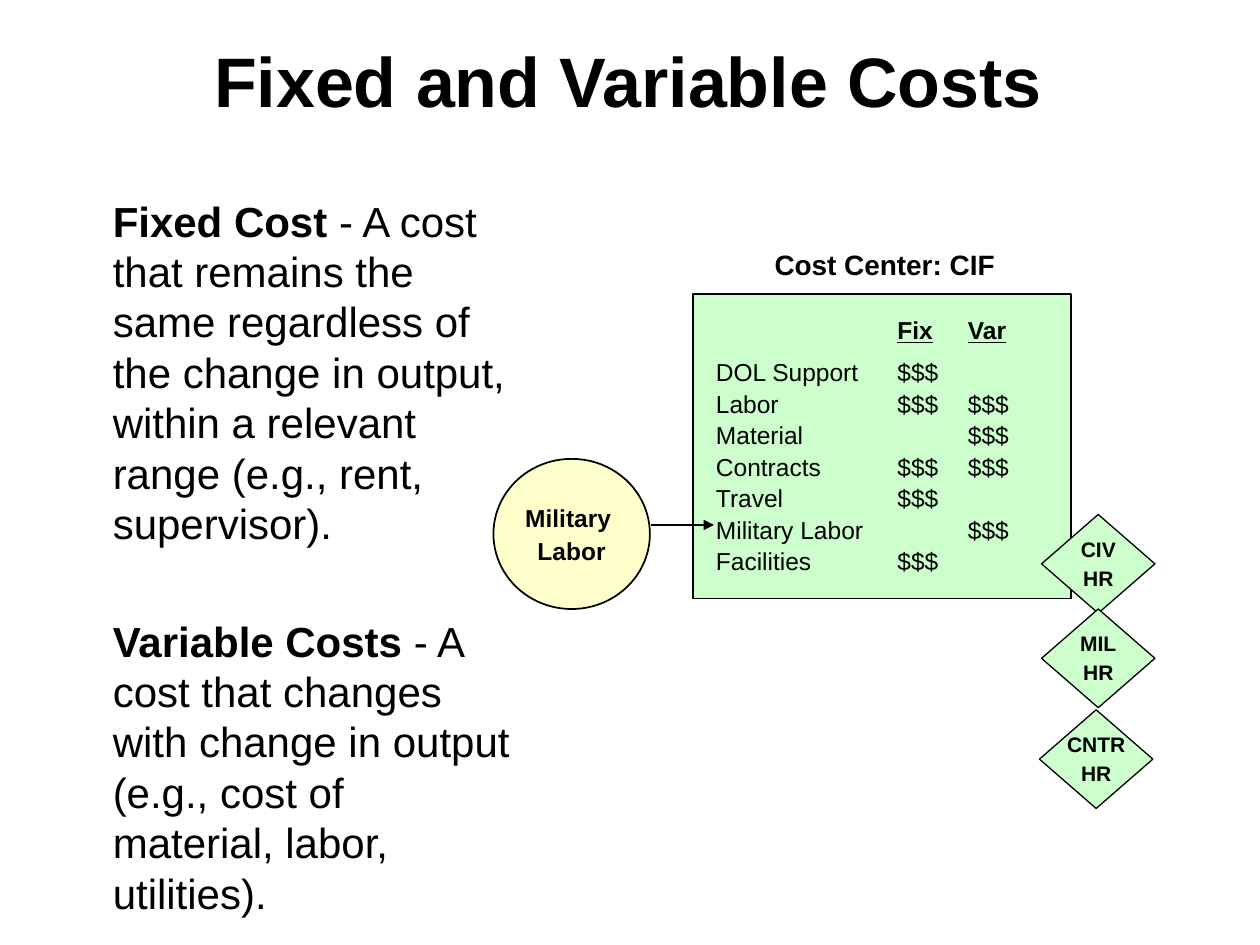
from dataclasses import dataclass
from lxml import etree
from pptx import Presentation
from pptx.dml.color import RGBColor
from pptx.enum.shapes import MSO_CONNECTOR, MSO_SHAPE
from pptx.enum.text import MSO_ANCHOR, PP_ALIGN
from pptx.oxml.ns import qn
from pptx.util import Inches, Pt

RECT, OVAL, GEM = MSO_SHAPE.RECTANGLE, MSO_SHAPE.OVAL, MSO_SHAPE.DIAMOND
LINE = MSO_CONNECTOR.STRAIGHT
LEFT, MID = PP_ALIGN.LEFT, PP_ALIGN.CENTER
TOP, CORE = MSO_ANCHOR.TOP, MSO_ANCHOR.MIDDLE


@dataclass
class Theme:
    font: str = "Arial"
    ink: str = "000000"
    green: str = "CCFFCC"
    cream: str = "FFFFCC"
    title: int = 40
    body: int = 24
    head: int = 16
    row: int = 14
    tag: int = 12
    thin: float = 0.75
    bold: float = 1


theme = Theme()
TITLE = "Fixed and Variable Costs"
TERMS = [
    ("Fixed Cost", " - A cost that remains the same regardless of the change in output, "
     "within a relevant range (e.g., rent, supervisor)."),
    ("Variable Costs", " - A cost that changes with change in output "
     "(e.g., cost of material, labor, utilities)."),
]
CENTER = "Cost Center: CIF"
HEADS = "\tFix\tVar"
COSTS = [
    "DOL Support\t$$$",
    "Labor\t$$$\t$$$",
    "Material\t\t$$$",
    "Contracts\t$$$\t$$$",
    "Travel\t$$$",
    "Military Labor\t\t$$$",
    "Facilities\t$$$",
]
SOURCE = "Military \nLabor"
POOLS = [("CIV\nHR", 99.2, 49, 6.8), ("MIL\nHR", 99.2, 58, 7), ("CNTR\nHR", 99, 67.6, 8.5)]

COLS, ROWS = 120, 90
TABS = (1.44, 2)

deck = Presentation()
deck.slide_width, deck.slide_height = Inches(10), Inches(7.5)
slide = deck.slides.add_slide(deck.slide_layouts[6])
shapes = slide.shapes


def place(x, y, w, h):
    across, down = deck.slide_width / COLS, deck.slide_height / ROWS
    return [int(n) for n in (x * across, y * down, w * across, h * down)]


def style(run, size, bold=False):
    font = run.font
    font.name, font.size, font.bold = theme.font, Pt(size), bold
    font.color.rgb = RGBColor.from_string(theme.ink)


def write(shape, text, size, bold=False, align=MID, after=0, pad=0.05, wrap=True, anchor=TOP):
    frame = shape.text_frame
    frame.text = text
    frame.word_wrap, frame.vertical_anchor = wrap, anchor
    frame.margin_left = frame.margin_right = Inches(0.1)
    frame.margin_top = frame.margin_bottom = Inches(pad)
    for para in frame.paragraphs:
        para.alignment, para.space_after = align, Pt(after)
        for run in para.runs:
            style(run, size, bold)
    return frame


def label(box, text, size, **look):
    return write(shapes.add_textbox(*place(*box)), text, size, **look)


def draw(kind, box, fill, width):
    shape = shapes.add_shape(kind, *place(*box))
    shape.shadow.inherit = False
    shape.fill.solid()
    shape.fill.fore_color.rgb = RGBColor.from_string(fill)
    shape.line.color.rgb = RGBColor.from_string(theme.ink)
    shape.line.width = Pt(width)
    return shape


def define(box):
    frame = shapes.add_textbox(*place(*box)).text_frame
    frame.word_wrap = True
    for i, (term, rest) in enumerate(TERMS):
        para = frame.add_paragraph() if i else frame.paragraphs[0]
        para.line_spacing = Pt(theme.body * 1.2)
        if i:
            para.space_before = Pt(theme.body * 1.6)
        props = para._p.get_or_add_pPr()
        props.set("marL", str(Inches(0.38)))
        props.set("indent", "0")
        for text, bold in ((term, True), (rest, False)):
            run = para.add_run()
            run.text = text
            style(run, theme.body, bold)


def entry(top, text, bold=False):
    frame = label((67, top, 33, 2.8), text, theme.row, bold=bold, align=LEFT, pad=0)
    para = frame.paragraphs[0]
    stops = etree.SubElement(para._p.get_or_add_pPr(), qn("a:tabLst"))
    for stop in TABS:
        etree.SubElement(stops, qn("a:tab"), pos=str(Inches(stop)), algn="l")
    for run in para.runs:
        run.font.underline = bold


def arrow(x, y, end):
    start = place(x, y, end, y)
    line = shapes.add_connector(LINE, *start)
    line.line.color.rgb = RGBColor.from_string(theme.ink)
    line.line.width = Pt(theme.bold)
    etree.SubElement(line.line._get_or_add_ln(), qn("a:tailEnd"), type="triangle")
    etree.SubElement(line._element.spPr, qn("a:effectLst"))


define((5, 18, 45, 67))
label((15.8, 3, 88, 11), TITLE, theme.title, bold=True)
draw(RECT, (66, 28, 36, 29), theme.green, theme.thin)
label((67.5, 23, 33.5, 4.4), CENTER, theme.head, bold=True, after=2)
oval = draw(OVAL, (47, 43.7, 14.9, 14.3), theme.cream, theme.bold)
write(oval, SOURCE, theme.row, bold=True, after=2, wrap=False, anchor=CORE)
arrow(62, 50, 68)

entry(30, HEADS, bold=True)
for i, cost in enumerate(COSTS):
    entry(34 + 3 * i, cost)

wide, high, tall = 10.8, 9.4, 6.4
for name, x, y, span in POOLS:
    draw(GEM, (x, y, wide, high), theme.green, theme.thin)
    box = (x + (wide - span) / 2, y + (high - tall) / 2, span, tall)
    label(box, name, theme.tag, bold=True, after=2, wrap=False)

deck.save("out.pptx")
